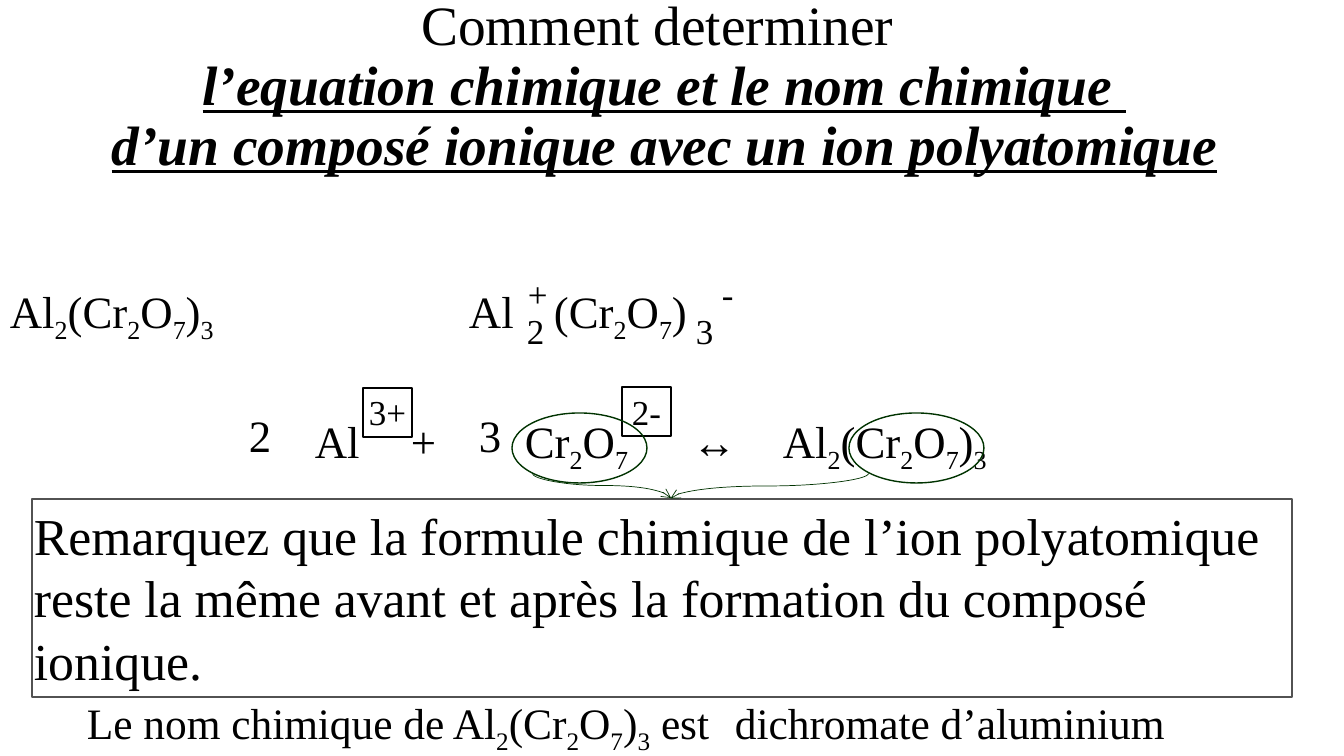
"""Build a slide on the formula and name of a polyatomic ionic compound."""
import pptx
import pptx.dml.color
import pptx.enum.shapes
import pptx.enum.text
import pptx.oxml
import pptx.oxml.ns
import pptx.util

PX = 914400 / 100.8
BLACK = pptx.dml.color.RGBColor(0x00, 0x00, 0x00)
GREY = pptx.dml.color.RGBColor(0x52, 0x52, 0x52)
GREEN = pptx.dml.color.RGBColor(0x00, 0x33, 0x00)
SERIF = "Times New Roman"
NS = pptx.oxml.ns.nsdecls("a")
COMPOUND = "Al_2_(Cr_2_O_7_)_3_"


def px(*lengths):
    return [pptx.util.Emu(round(length * PX)) for length in lengths]


def write(para, text, size, font=SERIF, underline=False, emphasis=False):
    for order, piece in enumerate(text.split("_")):
        if piece:
            span = para.add_run()
            span.text = piece
            span.font.size = pptx.util.Pt(size)
            span.font.name = font
            span.font.color.rgb = BLACK
            span.font.underline = underline
            span.font.bold = span.font.italic = emphasis
            if order % 2:
                span._r.get_or_add_rPr().set("baseline", "-25000")


deck = pptx.Presentation()
deck.slide_width, deck.slide_height = px(1344, 756)
page = deck.slides.add_slide(deck.slide_layouts[6])

title = page.shapes.add_textbox(*px(0, 23, 1329, 129))
title.text_frame.word_wrap = True
title.text_frame.vertical_anchor = pptx.enum.text.MSO_ANCHOR.MIDDLE
para = title.text_frame.paragraphs[0]
para.alignment = pptx.enum.text.PP_ALIGN.CENTER
para.line_spacing = 0.9
write(para, "Comment determiner ", 39.6)
for line in ("l’equation chimique et le nom chimique ",
             "d’un composé ionique avec un ion polyatomique"):
    para.add_line_break()
    write(para, line, 39.6, underline=True, emphasis=True)

remark = ("Remarquez que la formule chimique de l’ion polyatomique "
          "reste la même avant et après la formation du composé ionique.")
labels = [
    (remark, 37, 24, 499, 1293, 199, True),
    (COMPOUND, 32, 0, 279, 234, 65, False),
    ("(Cr_2_O_7_)", 32, 544, 279, 158, 65, False),
    ("Al", 32, 459, 279, 66, 65, False),
    ("3", 25, 686, 305, 38, 52, False),
    ("2", 25, 517, 305, 38, 52, False),
    ("+", 25, 518, 268, 40, 52, False),
    ("-", 25, 712, 268, 32, 52, False),
    ("3+", 25, 359, 386, 58, 52, False),
    ("2-", 25, 622, 386, 49, 52, False),
    ("2", 32, 239, 403, 43, 65, False),
    ("3", 32, 469, 403, 43, 65, False),
    (f"Le nom chimique de {COMPOUND} est", 31, 77, 691, 679, 62, False),
    ("dichromate d’aluminium", 31, 725, 691, 455, 62, False),
]
for text, size, left, top, width, height, wrap in labels:
    box = page.shapes.add_textbox(*px(left, top, width, height))
    box.text_frame.word_wrap = wrap
    write(box.text_frame.paragraphs[0], text, size)

equation = page.shapes.add_textbox(*px(208, 409, 936, 65))
equation.text_frame.word_wrap = True
para = equation.text_frame.paragraphs[0]
tabs = pptx.oxml.parse_xml(f"<a:tabLst {NS}/>")
for stop in px(5, 86, 97, 193, 229, 307, 474, 565):
    tabs.append(pptx.oxml.parse_xml(f'<a:tab {NS} pos="{stop}" algn="l"/>'))
para._p.get_or_add_pPr().append(tabs)
write(para, "\t", 32, font="Calibri")
write(para, "\t", 32, font="Calibri", underline=True)
write(para, "\tAl\t+\t", 32)
write(para, "\t", 32, underline=True)
write(para, f"Cr_2_O_7_\t↔\t{COMPOUND}", 32)

KINDS = pptx.enum.shapes.MSO_SHAPE
outlines = [
    (KINDS.RECTANGLE, BLACK, 363, 388, 49, 49),
    (KINDS.RECTANGLE, BLACK, 622, 387, 49, 49),
    (KINDS.RECTANGLE, GREY, 32, 499, 1260, 198),
    (KINDS.OVAL, GREEN, 512, 413, 135, 70),
    (KINDS.OVAL, GREEN, 849, 413, 135, 70),
]
for kind, colour, left, top, width, height in outlines:
    outline = page.shapes.add_shape(kind, *px(left, top, width, height))
    outline.shadow.inherit = False
    outline.fill.background()
    outline.line.color.rgb = colour
    outline.line.width = pptx.util.Pt(1)

curves = [(614, 416, 589, 555, 270), (757, 387, 782, 585, 90)]
for begin_x, begin_y, end_x, end_y, turn in curves:
    arrow = page.shapes.add_connector(
        pptx.enum.shapes.MSO_CONNECTOR.CURVE, *px(begin_x, begin_y, end_x, end_y))
    arrow.line.color.rgb = GREEN
    arrow.line.width = pptx.util.Pt(0.5)
    arrow.line._get_or_add_ln().append(
        pptx.oxml.parse_xml(f'<a:tailEnd {NS} type="arrow"/>'))
    properties = arrow._element.spPr
    properties.xfrm.set("rot", str(turn * 60000))
    properties.append(pptx.oxml.parse_xml(f"<a:effectLst {NS}/>"))

deck.save("out.pptx")
